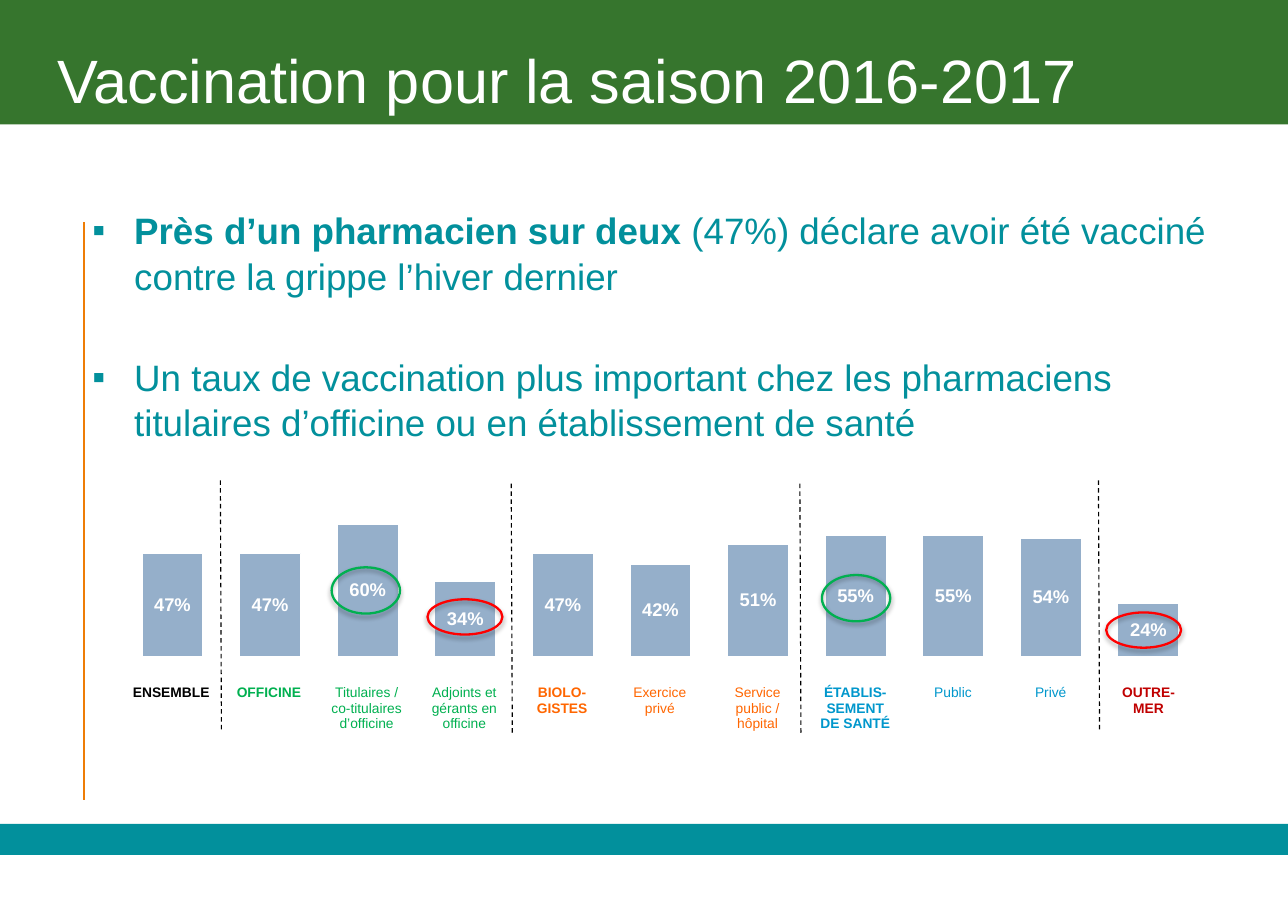
from collections import namedtuple

from pptx import Presentation
from pptx.chart.data import CategoryChartData
from pptx.dml.color import RGBColor
from pptx.enum.chart import XL_CHART_TYPE, XL_LABEL_POSITION
from pptx.enum.dml import MSO_LINE
from pptx.enum.shapes import MSO_CONNECTOR, MSO_SHAPE
from pptx.enum.text import MSO_ANCHOR, PP_ALIGN
from pptx.oxml import parse_xml
from pptx.oxml.ns import nsdecls, qn
from pptx.util import Emu, Pt

Box = namedtuple("Box", "left top width height")

FONT = "Arial"
WHITE, BLACK = "FFFFFF", "000000"
GREEN, TEAL, ORANGE = "36752D", "02909C", "EE7D06"
OFFICINE, BIOLOGY, HOSPITAL, OVERSEAS = "00B050", "FF6600", "0097CC", "C00000"
RED = "FF0000"
PERCENT = "0%;;\\-"

GROUPS = [
    ("ENSEMBLE", 0.47, BLACK, True),
    ("OFFICINE", 0.47, OFFICINE, True),
    ("Titulaires / co-titulaires d’officine", 0.6, OFFICINE, False),
    ("Adjoints et gérants en officine", 0.34, OFFICINE, False),
    ("BIOLO-GISTES", 0.47, BIOLOGY, True),
    ("Exercice privé", 0.42, BIOLOGY, False),
    ("Service public / hôpital", 0.51, BIOLOGY, False),
    ("ÉTABLIS-SEMENT DE SANTÉ", 0.55, HOSPITAL, True),
    ("Public", 0.55, HOSPITAL, False),
    ("Privé", 0.54, HOSPITAL, False),
    ("OUTRE-MER", 0.24, OVERSEAS, True),
]


def px(length):
    return Emu(length * 9144)


def color(value):
    return RGBColor.from_string(value)


def place(box, left, top, width, height):
    return [px(n) for n in (box.left + left, box.top + top, width, height)]


def style_font(font, size, fill, bold=False):
    font.name = FONT
    font.size = Pt(size)
    font.bold = bold
    font.color.rgb = color(fill)


def add_span(para, text, size=24, fill=TEAL, bold=False):
    span = para.add_run()
    span.text = text
    style_font(span.font, size, fill, bold)


def add_text_box(page, box, anchor=MSO_ANCHOR.TOP, inset=10):
    frame = page.shapes.add_textbox(*place(box, 0, 0, box.width, box.height)).text_frame
    frame.word_wrap = True
    frame.vertical_anchor = anchor
    frame.margin_left = px(inset)
    frame.margin_right = px(10)
    frame.margin_top = frame.margin_bottom = px(5)
    return frame


def add_band(page, box, fill):
    band = page.shapes.add_shape(MSO_SHAPE.RECTANGLE, *place(box, 0, 0, box.width, box.height))
    band.shadow.inherit = False
    band.fill.solid()
    band.fill.fore_color.rgb = color(fill)
    band.line.fill.background()


def add_line(page, start, end, stroke, weight, dash=None):
    line = page.shapes.add_connector(MSO_CONNECTOR.STRAIGHT, *[px(n) for n in start + end])
    line.line.color.rgb = color(stroke)
    line.line.width = Pt(weight)
    if dash:
        line.line.dash_style = dash
    line._element.spPr.append(parse_xml(f"<a:effectLst {nsdecls('a')}/>"))


def add_frame(page, box):
    add_band(page, Box(box.left, box.top, box.width, 113), GREEN)
    add_band(page, Box(box.left, box.top + 748, box.width, 28), TEAL)
    rule = box.left + 76
    add_line(page, (rule, box.top + 202), (rule, box.top + 726), ORANGE, 1.5)


def add_title(page, box):
    frame = add_text_box(page, box, MSO_ANCHOR.MIDDLE, 22)
    add_span(frame.paragraphs[0], "Vaccination pour la saison 2016-2017", 40, WHITE)


def add_bullet(para):
    properties = para._p.get_or_add_pPr()
    properties.set("marL", str(px(38)))
    properties.set("indent", str(-px(38)))
    properties.append(parse_xml(f'<a:buFont {nsdecls("a")} typeface="{FONT}"/>'))
    properties.append(parse_xml(f'<a:buChar {nsdecls("a")} char="▪"/>'))
    para.line_spacing = 1.04


def add_findings(page, box):
    frame = add_text_box(page, box)
    first = frame.paragraphs[0]
    add_bullet(first)
    first.space_after = Pt(36)
    add_span(first, "Près d’un pharmacien sur deux", bold=True)
    add_span(first, " (47%) déclare avoir été vacciné contre la grippe l’hiver dernier")
    second = frame.add_paragraph()
    add_bullet(second)
    add_span(second, "Un taux de vaccination plus important chez les pharmaciens "
                     "titulaires d’officine ou en établissement de santé")


def set_plot_area(chart, left, top, width, height):
    area = chart._chartSpace.chart.plotArea
    for layout in area.findall(qn("c:layout")):
        area.remove(layout)
    sides = zip("xywh", (left, top, width, height))
    values = "".join(f'<c:{side} val="{value}"/>' for side, value in sides)
    area.insert(0, parse_xml(
        f'<c:layout {nsdecls("c")}><c:manualLayout><c:layoutTarget val="inner"/>'
        f'<c:xMode val="edge"/><c:yMode val="edge"/>{values}</c:manualLayout></c:layout>'))


def add_rate_chart(page, box):
    data = CategoryChartData(number_format=PERCENT)
    data.categories = [str(n + 1) for n in range(len(GROUPS))]
    data.add_series("Series 1", [rate for _, rate, _, _ in GROUPS])
    chart = page.shapes.add_chart(
        XL_CHART_TYPE.COLUMN_STACKED, *place(box, 0, 0, box.width, box.height), data).chart
    chart.has_legend = chart.has_title = False
    style_font(chart.font, 18, BLACK)
    chart.category_axis.visible = False
    axis = chart.value_axis
    axis.visible = axis.has_major_gridlines = False
    axis.minimum_scale, axis.maximum_scale = 0, 1.1

    plot = chart.plots[0]
    plot.gap_width, plot.overlap = 60, 100
    plot.vary_by_categories = False
    bars = plot.series[0].format
    bars.fill.solid()
    bars.fill.fore_color.rgb = color("95AFCA")
    bars.line.color.rgb = color(WHITE)
    bars.line.width = Pt(0.75)
    plot.has_data_labels = True
    labels = plot.data_labels
    labels.show_value = True
    labels.position = XL_LABEL_POSITION.CENTER
    labels.number_format = PERCENT
    labels.number_format_is_linked = False
    style_font(labels.font, 12, WHITE, True)
    set_plot_area(chart, 0.02, 0.06, 0.96, 0.88)


def add_group_table(page, box):
    table = page.shapes.add_table(
        1, len(GROUPS), *place(box, 0, 0, box.width, box.height)).table
    table.first_row = table.horz_banding = False
    for column, (name, _, fill, bold) in enumerate(GROUPS):
        table.columns[column].width = px(box.width) // len(GROUPS)
        cell = table.cell(0, column)
        cell.fill.background()
        cell.margin_left = cell.margin_right = px(8)
        cell.margin_top = cell.margin_bottom = px(4)
        para = cell.text_frame.paragraphs[0]
        para.alignment = PP_ALIGN.CENTER
        add_span(para, name, 9, fill, bold)


def add_highlight(page, box, stroke):
    ring = page.shapes.add_shape(MSO_SHAPE.OVAL, *place(box, 0, 0, box.width, box.height))
    ring.fill.background()
    ring.line.color.rgb = color(stroke)
    ring.line.width = Pt(1.5)
    ring._element.spPr.append(parse_xml(
        f'<a:effectLst {nsdecls("a")}><a:outerShdw blurRad="{Pt(3.1)}" dist="{Pt(1.8)}" '
        f'dir="5400000" rotWithShape="0"><a:srgbClr val="{BLACK}"><a:alpha val="35000"/>'
        '</a:srgbClr></a:outerShdw></a:effectLst>'))


def add_rates(page, box):
    add_rate_chart(page, Box(box.left, box.top, box.width, 249))
    add_group_table(page, Box(box.left + 19, box.top + 256, 976, 53))
    for left, top in ((108, 74), (372, 77), (634, 77), (905, 74)):
        start = (box.left + left, box.top + top)
        add_line(page, start, (start[0] + 1, start[1] + 229), BLACK, 0.75, MSO_LINE.DASH)
    for left, top, width, height, stroke in (
            (209, 153, 62, 42, OFFICINE), (654, 160, 62, 42, OFFICINE),
            (296, 182, 68, 32, RED), (912, 194, 68, 32, RED)):
        add_highlight(page, Box(box.left + left, box.top + top, width, height), stroke)


def main():
    deck = Presentation()
    deck.slide_width, deck.slide_height = px(1169), px(827)
    page = deck.slides.add_slide(deck.slide_layouts[6])
    add_frame(page, Box(0, 0, 1169, 827))
    add_title(page, Box(30, 34, 1111, 76))
    add_findings(page, Box(74, 182, 1066, 98))
    add_rates(page, Box(92, 362, 1015, 309))
    deck.save("out.pptx")


if __name__ == "__main__":
    main()
